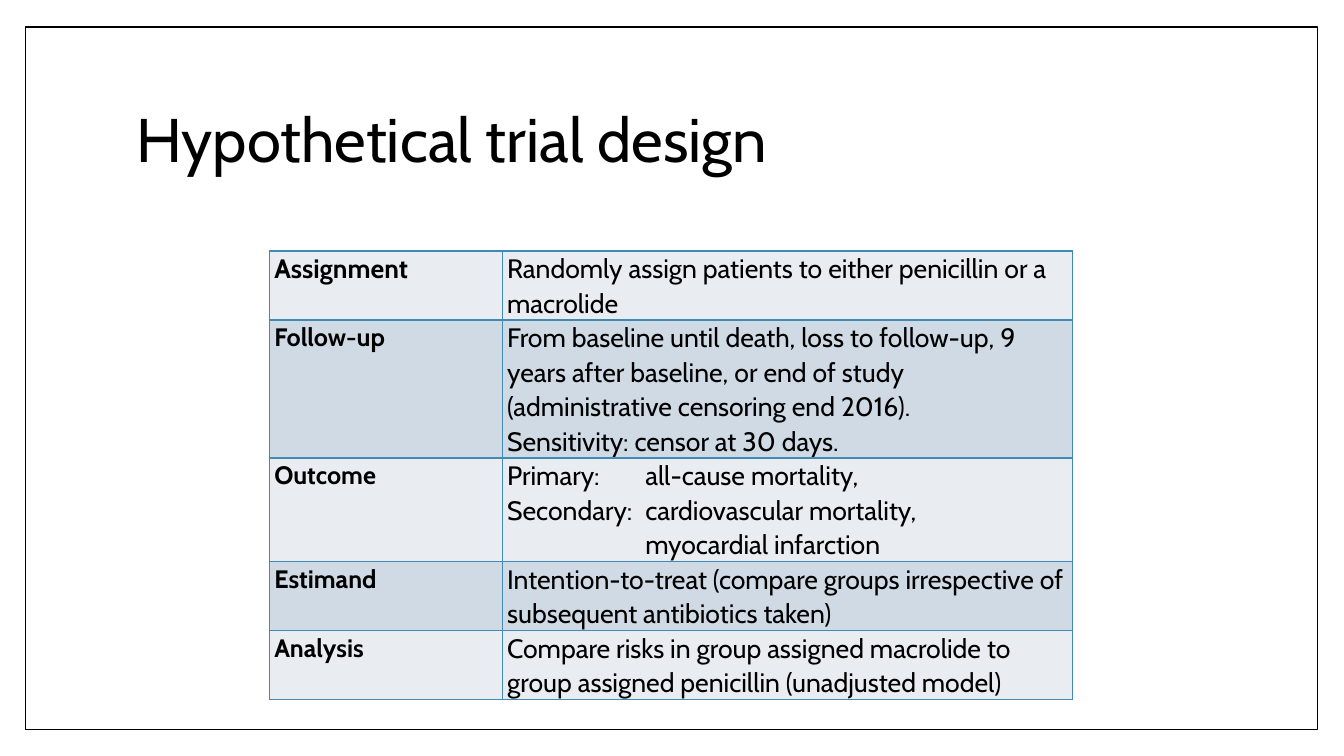
"""Build the hypothetical trial design slide."""
from lxml.etree import SubElement
from pptx import Presentation
from pptx.dml.color import RGBColor
from pptx.enum.shapes import MSO_SHAPE as SHAPE
from pptx.enum.text import MSO_ANCHOR as ANCHOR, PP_ALIGN as ALIGN
from pptx.oxml.ns import qn
from pptx.util import Inches, Pt

LINE_H = 0.34
TAB = 1.37
COLS = [2.31, 5.66]
BANDS = ["E9EDF2", "CFDAE5"]
ROWS = [
    ("Assignment", 19, 2, ["Randomly assign patients to either penicillin or a macrolide"]),
    ("Follow-up", 18, 4, [
        "From baseline until death, loss to follow-up, 9 years after baseline, "
        "or end of study (administrative censoring end 2016).",
        "Sensitivity: censor at 30 days."]),
    ("Outcome", 18, 3, [
        "Primary:\tall-cause mortality,",
        "Secondary:\tcardiovascular mortality,",
        "\tmyocardial infarction"]),
    ("Estimand", 18, 2, [
        "Intention-to-treat (compare groups irrespective of subsequent antibiotics taken)"]),
    ("Analysis", 18, 2, [
        "Compare risks in group assigned macrolide to group assigned penicillin "
        "(unadjusted model)"]),
]


def color(value):
    return RGBColor.from_string(value)


def write(p, text, size=19, bold=False, spacing=1.07):
    p.alignment = ALIGN.LEFT
    p.line_spacing = spacing
    if "\t" in text:
        tabs = SubElement(p._p.get_or_add_pPr(), qn("a:tabLst"))
        SubElement(tabs, qn("a:tab"), pos=str(Inches(TAB)), algn="l")
    r = p.add_run()
    r.text = text
    r.font.name = "Cabin"
    r.font.size = Pt(size)
    r.font.bold = bold
    r.font.color.rgb = color("000000")


prs = Presentation()
prs.slide_width, prs.slide_height = Inches(13.33), Inches(7.5)
s = prs.slides.add_slide(prs.slide_layouts[5])

title = s.shapes.title
title.left, title.top = Inches(1.25), Inches(0.67)
title.width, title.height = Inches(10.8), Inches(1.48)
title.text_frame.vertical_anchor = ANCHOR.MIDDLE
write(title.text_frame.paragraphs[0], "Hypothetical trial design", size=44, spacing=0.9)

frame = s.shapes.add_shape(SHAPE.RECTANGLE, Inches(0.25), Inches(0.27),
                           Inches(12.82), Inches(6.97))
frame.shadow.inherit = False
frame.fill.solid()
frame.fill.fore_color.rgb = color("FFFFFF")
frame.line.color.rgb = color("000000")
frame.line.width = Pt(1)
title._element.addprevious(frame._element)

height = LINE_H * sum(row[2] for row in ROWS)
table = s.shapes.add_table(len(ROWS), len(COLS), Inches(2.67), Inches(2.49),
                           Inches(sum(COLS)), Inches(height)).table
table.first_row = table.horz_banding = False
for column, width in zip(table.columns, COLS):
    column.width = Inches(width)

for i, (label, size, lines, details) in enumerate(ROWS):
    table.rows[i].height = Inches(LINE_H * lines)
    for j, texts in enumerate([[label], details]):
        cell = table.cell(i, j)
        cell.margin_left = cell.margin_right = Inches(0.05)
        cell.margin_top = cell.margin_bottom = 0
        for side in ("lnL", "lnR", "lnT", "lnB"):
            ln = SubElement(cell._tc.get_or_add_tcPr(), qn(f"a:{side}"), w=str(Pt(1)))
            SubElement(SubElement(ln, qn("a:solidFill")), qn("a:srgbClr"), val="418AB3")
        cell.fill.solid()
        cell.fill.fore_color.rgb = color(BANDS[i % 2])
        tf = cell.text_frame
        for k, text in enumerate(texts):
            p = tf.add_paragraph() if k else tf.paragraphs[0]
            write(p, text, size=19 if j else size, bold=j == 0)

prs.save("out.pptx")
